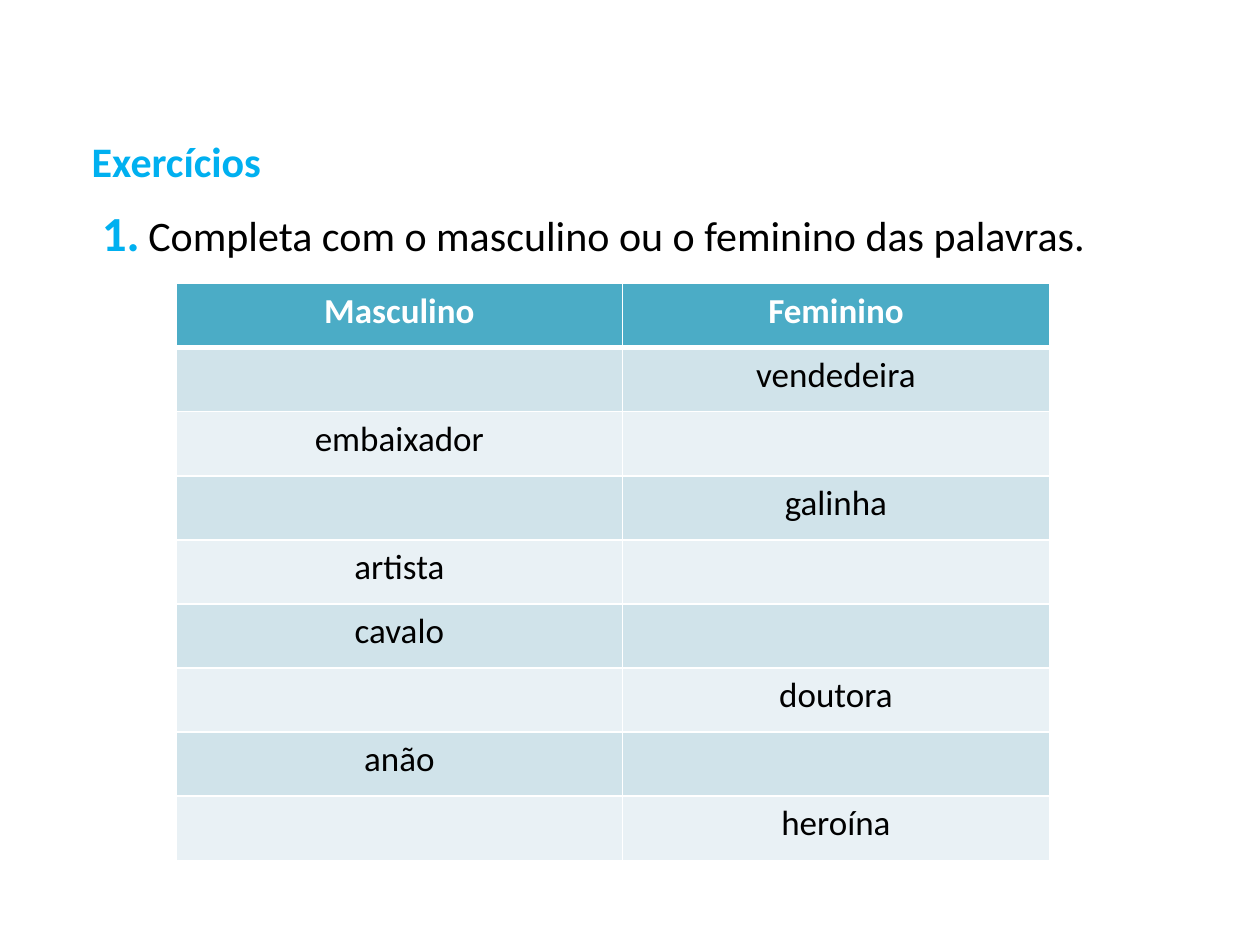
"""Build the slide with the masculine and feminine exercise table."""
from lxml.etree import SubElement
from pptx import Presentation
from pptx.dml.color import RGBColor
from pptx.enum.text import PP_ALIGN
from pptx.oxml.ns import qn
from pptx.util import Inches, Pt

SKY = RGBColor(0x00, 0xB0, 0xF0)
BLACK = RGBColor(0x00, 0x00, 0x00)
WHITE = RGBColor(0xFF, 0xFF, 0xFF)
TEAL = RGBColor(0x4B, 0xAC, 0xC6)
BANDS = (RGBColor(0xE9, 0xF1, 0xF5), RGBColor(0xD0, 0xE3, 0xEA))

HEADING = {"size": Pt(24), "bold": True, "color": SKY}
NUMBER = {"size": Pt(28), "bold": True, "color": SKY}
GAP = {"size": Pt(22), "bold": True, "color": SKY}
INSTRUCTION = {"size": Pt(24), "bold": False, "color": BLACK}
HEADER = {"size": Pt(20), "bold": True, "color": WHITE}
WORD = {"size": Pt(20), "bold": False, "color": BLACK}

LINES = [
    ((0.63, 1.03, 1.56, 0.5), [("Exercícios", HEADING)]),
    ((0.71, 1.56, 8.74, 0.57), [
        ("1.", NUMBER),
        (" ", GAP),
        ("Completa com o masculino ou o feminino das palavras.", INSTRUCTION),
    ]),
]
WORD_PAIRS = [
    ("Masculino", "Feminino"),
    ("", "vendedeira"),
    ("embaixador", ""),
    ("", "galinha"),
    ("artista", ""),
    ("cavalo", ""),
    ("", "doutora"),
    ("anão", ""),
    ("", "heroína"),
]
TABLE_PLACE = (1.4, 2.25, 6.93, 4.58)
COLUMN_WIDTHS = (3.54, 3.39)


def add_run(paragraph, text, style):
    run = paragraph.add_run()
    run.text = text
    run.font.name = "Calibri"
    for key, value in style.items():
        if key == "color":
            run.font.color.rgb = value
        else:
            setattr(run.font, key, value)


def add_line(slide, place, runs):
    frame = slide.shapes.add_textbox(*map(Inches, place)).text_frame
    frame.word_wrap = True
    for text, style in runs:
        add_run(frame.paragraphs[0], text, style)


def set_borders(cell, widths):
    properties = cell._tc.get_or_add_tcPr()
    for side, width in widths.items():
        border = SubElement(properties, qn(f"a:ln{side}"), w=str(Pt(width)))
        SubElement(SubElement(border, qn("a:solidFill")), qn("a:srgbClr"), val=str(WHITE))


def add_word_table(slide):
    table = slide.shapes.add_table(
        len(WORD_PAIRS), len(COLUMN_WIDTHS), *map(Inches, TABLE_PLACE)
    ).table
    for column, width in zip(table.columns, COLUMN_WIDTHS):
        column.width = Inches(width)
    for row, pair in enumerate(WORD_PAIRS):
        for column, word in enumerate(pair):
            cell = table.cell(row, column)
            set_borders(cell, {"L": 1, "R": 1, "T": 3 if row == 1 else 1, "B": 3 if row == 0 else 1})
            cell.fill.solid()
            cell.fill.fore_color.rgb = BANDS[row % 2] if row else TEAL
            paragraph = cell.text_frame.paragraphs[0]
            paragraph.alignment = PP_ALIGN.CENTER
            if word:
                add_run(paragraph, word, WORD if row else HEADER)


def main():
    presentation = Presentation()
    presentation.slide_width = Inches(10)
    presentation.slide_height = Inches(7.5)
    slide = presentation.slides.add_slide(presentation.slide_layouts[6])
    for place, runs in LINES:
        add_line(slide, place, runs)
    add_word_table(slide)
    presentation.save("out.pptx")


if __name__ == "__main__":
    main()
